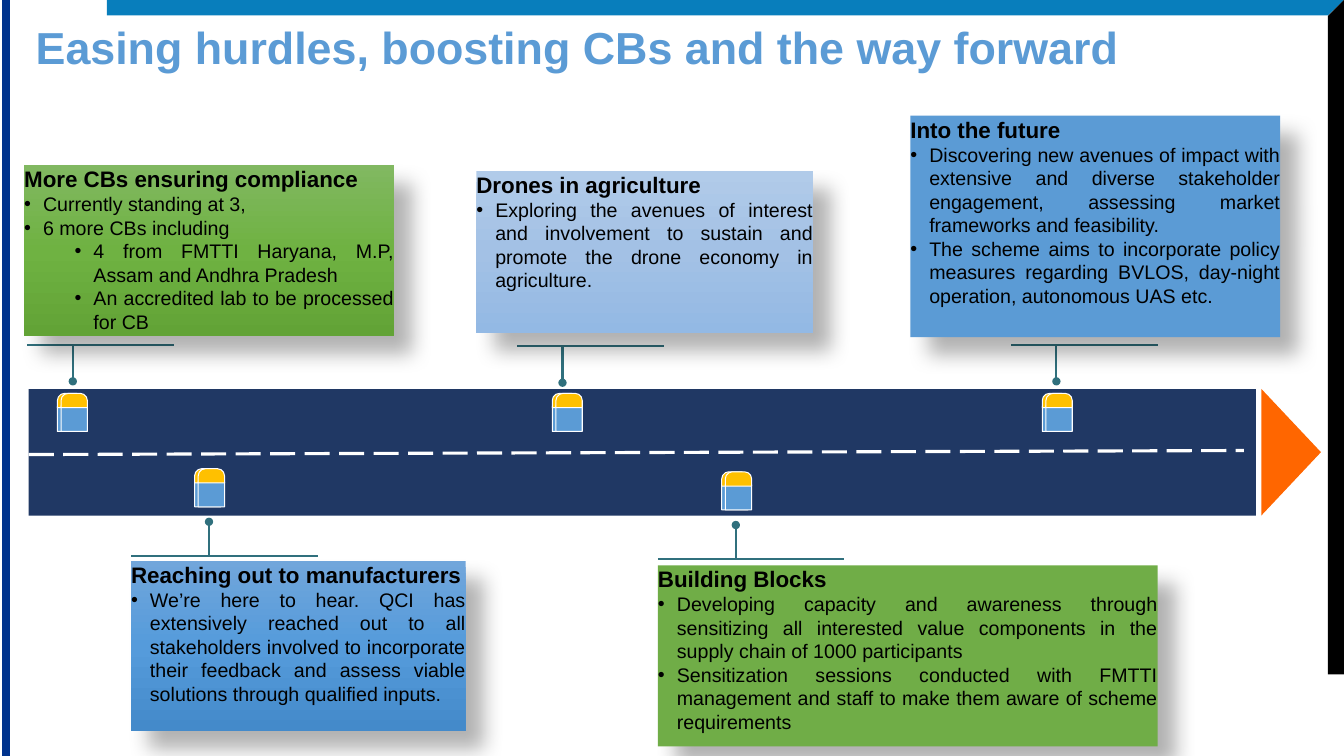
import pptx
import pptx.util
import pptx.dml.color
import pptx.enum.dml
import pptx.enum.shapes
import pptx.enum.text
from lxml import etree

Pt = pptx.util.Pt
SHAPE = pptx.enum.shapes.MSO_SHAPE
ALIGN = pptx.enum.text.PP_ALIGN

TITLE = "Easing hurdles, boosting CBs and the way forward"

# box: left, top, width, height; stop: post x, bar y; car: left, top
MILESTONES = [
    dict(side="above", box=(17.3, 118.1, 264.2, 121.7), stop=(52, 246.2), car=(41, 281),
         fill=("81B861", "6FB242", "62A336"),
         head="More CBs ensuring compliance",
         points=[(0, "Currently standing at 3,"),
                 (0, "6 more CBs including"),
                 (1, "4 from FMTTI Haryana, M.P, Assam and Andhra Pradesh"),
                 (1, "An accredited lab to be processed for CB")]),
    dict(side="below", box=(93.6, 400.5, 239, 121.7), stop=(149.3, 397), car=(139, 334.8),
         fill=("71A6DB", "559BDB", "448ACA"),
         head="Reaching out to manufacturers",
         points=[(0, "We’re here to hear. QCI has extensively reached out to all stakeholders "
                     "involved to incorporate their feedback and assess viable solutions "
                     "through qualified inputs.")]),
    dict(side="above", box=(340.3, 122, 240.5, 115.9), stop=(401.8, 247.2), car=(394.5, 281),
         fill=("B1CBE9", "A3C1E5", "93B9E4"),
         head="Drones in agriculture",
         points=[(0, "Exploring the avenues of interest and involvement to sustain and "
                     "promote the drone economy in agriculture.")]),
    dict(side="below", box=(470, 403.8, 357, 129.3), stop=(525.6, 399.3), car=(515.5, 337),
         fill=("70AD47",),
         head="Building Blocks",
         points=[(0, "Developing capacity and awareness through sensitizing all interested "
                     "value components in the supply chain of 1000 participants"),
                 (0, "Sensitization sessions conducted with FMTTI management and staff to "
                     "make them aware of scheme requirements")]),
    dict(side="above", box=(650.3, 82.6, 264.2, 158.2), stop=(754.6, 246.2), car=(744.5, 281),
         fill=("5B9BD5",),
         head="Into the future",
         points=[(0, "Discovering new avenues of impact with extensive and diverse "
                     "stakeholder engagement, assessing market frameworks and feasibility."),
                 (0, "The scheme aims to incorporate policy measures regarding BVLOS, "
                     "day-night operation, autonomous UAS etc.")]),
]
# bar start relative to the post, bar length, dot distance from the bar
POSTS = {"above": (-32.4, 104.7, 26.2), "below": (-55.6, 133.2, -24.3)}

THEME = dict(font="Arial", title_size=32, head_size=16, body_size=14,
             title="5B9BD5", text="000000", top="087EBC", right="000000", left="00338D",
             road="203864", arrow="FF6600", dash="FFFFFF", post="30707D",
             car="5B9BD5", roof="FFC000", car_line="FFFFFF")

INDENT, SUB_INDENT = 13.5, 49.5


def rgb(key):
    return pptx.dml.color.RGBColor.from_string(THEME.get(key, key))


def add_xml(parent, xml):
    ns = 'xmlns:a="http://schemas.openxmlformats.org/drawingml/2006/main"'
    parent.append(etree.fromstring(xml.replace(" ", f" {ns} ", 1)))


def paint(s, fill, line=None, width=1):
    s.shadow.inherit = False
    s.fill.solid()
    s.fill.fore_color.rgb = rgb(fill)
    if line:
        s.line.color.rgb = rgb(line)
        s.line.width = Pt(width)
    else:
        s.line.fill.background()


def add_shape(slide, kind, box, fill, line=None, width=1):
    s = slide.shapes.add_shape(kind, *map(Pt, box))
    paint(s, fill, line, width)
    return s


def add_polygon(slide, points, fill):
    points = [(Pt(x), Pt(y)) for x, y in points]
    builder = slide.shapes.build_freeform(*points[0])
    builder.add_line_segments(points[1:], close=True)
    paint(builder.convert_to_shape(), fill)


def add_line(slide, start, end, color, width):
    c = slide.shapes.add_connector(pptx.enum.shapes.MSO_CONNECTOR.STRAIGHT,
                                   *map(Pt, start + end))
    c.line.color.rgb = rgb(color)
    c.line.width = Pt(width)
    add_xml(c._element.spPr, "<a:effectLst />")
    return c


def prepare_frame(s):
    tf = s.text_frame
    tf.word_wrap = True
    tf.margin_left = tf.margin_top = tf.margin_right = tf.margin_bottom = 0
    tf.vertical_anchor = pptx.enum.text.MSO_ANCHOR.TOP
    return tf


def style(p, size, color, bold, align):
    p.alignment = align
    p.font.name = THEME["font"]
    p.font.size = Pt(THEME[size])
    p.font.color.rgb = rgb(color)
    p.font.bold = bold


def add_frame(slide):
    add_polygon(slide, [(948.5, 11), (960, 0), (76.3, 0), (76.3, 11)], "top")
    add_polygon(slide, [(948.5, 11.5), (960, 0), (960, 481.7), (948.5, 481.7)], "right")
    add_shape(slide, SHAPE.RECTANGLE, (2, 0, 5, 540), "left", "left")


def add_title(slide):
    tf = prepare_frame(slide.shapes.add_textbox(Pt(25.5), Pt(18.5), Pt(801.4), Pt(34)))
    p = tf.paragraphs[0]
    p.text = TITLE
    p.line_spacing = 0.9
    style(p, "title_size", "title", True, ALIGN.LEFT)


def add_road(slide):
    add_shape(slide, SHAPE.RECTANGLE, (20.5, 278, 876.7, 90.3), "road")
    add_shape(slide, SHAPE.ISOSCELES_TRIANGLE, (877, 301.7, 90.5, 42.6), "arrow").rotation = 90
    centre = add_line(slide, (20.5, 324.7), (888.5, 321.8), "dash", 2.25)
    centre.line.dash_style = pptx.enum.dml.MSO_LINE.LONG_DASH


def add_car(slide, left, top):
    for x in (left, left + 2.6):
        for dy, height, fill, corner in ((5.6, 21.6, "car", 0.214), (0, 10.2, "roof", 0.5)):
            s = add_shape(slide, SHAPE.ROUND_2_SAME_RECTANGLE, (x, top + dy, 18.8, height),
                          fill, "car_line", 0.75)
            s.adjustments[0] = corner


def add_post(slide, x, y, side):
    start, length, reach = POSTS[side]
    post = add_line(slide, (x, y + reach), (x, y), "post", 1.5)
    add_xml(post.line._get_or_add_ln(), '<a:headEnd type="oval"/>')
    add_line(slide, (x + start, y), (x + start + length, y), "post", 1.5)


def add_card(slide, box, fill, head, points):
    s = add_shape(slide, SHAPE.RECTANGLE, box, fill[0])
    if len(fill) > 1:
        spPr = s._element.spPr
        solid = spPr.find("{*}solidFill")
        stops = "".join(f'<a:gs pos="{i * 50000}"><a:srgbClr val="{c}"/></a:gs>'
                        for i, c in enumerate(fill))
        add_xml(spPr, f'<a:gradFill rotWithShape="1"><a:gsLst>{stops}</a:gsLst>'
                      '<a:lin ang="5400000" scaled="0"/></a:gradFill>')
        spPr.replace(solid, spPr[-1])
    add_xml(s._element.spPr.find("{*}effectLst"),
            f'<a:outerShdw blurRad="{Pt(15)}" dist="{Pt(18)}" dir="2700000" algn="tl" '
            'rotWithShape="0"><a:srgbClr val="000000"><a:alpha val="30000"/>'
            '</a:srgbClr></a:outerShdw>')
    tf = prepare_frame(s)
    p = tf.paragraphs[0]
    p.text = head
    style(p, "head_size", "text", True, ALIGN.JUSTIFY)
    for level, text in points:
        p = tf.add_paragraph()
        p.text = text
        p.level = level
        pPr = p._p.get_or_add_pPr()
        pPr.set("marL", str(Pt(SUB_INDENT if level else INDENT)))
        pPr.set("indent", str(Pt(-INDENT)))
        add_xml(pPr, '<a:buFont typeface="Arial"/>')
        add_xml(pPr, '<a:buChar char="•"/>')
        style(p, "body_size", "text", False, ALIGN.JUSTIFY)


def main():
    prs = pptx.Presentation()
    prs.slide_width, prs.slide_height = Pt(960), Pt(540)
    slide = prs.slides.add_slide(prs.slide_layouts[6])
    add_frame(slide)
    add_title(slide)
    add_road(slide)
    for m in MILESTONES:
        add_car(slide, *m["car"])
        add_post(slide, *m["stop"], m["side"])
    for m in MILESTONES:
        add_card(slide, m["box"], m["fill"], m["head"], m["points"])
    prs.save("out.pptx")


if __name__ == "__main__":
    main()
